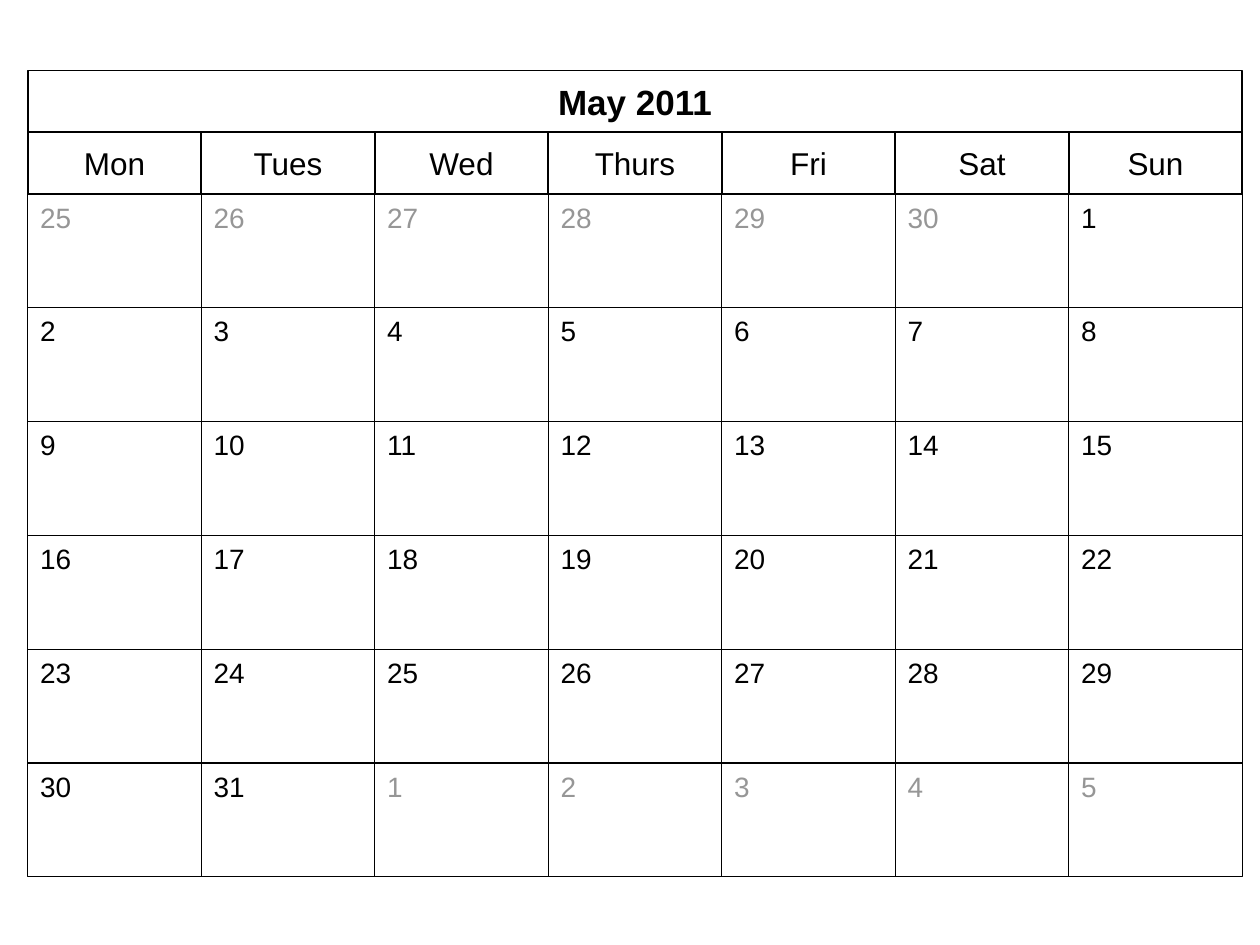
import dataclasses

import pptx
import pptx.dml.color
import pptx.enum.shapes
import pptx.enum.text
import pptx.util

Inches = pptx.util.Inches
Pt = pptx.util.Pt
ALIGN = pptx.enum.text.PP_ALIGN
ANCHOR = pptx.enum.text.MSO_ANCHOR


@dataclasses.dataclass(frozen=True)
class Theme:
    font: str = "Arial"
    ink: str = "000000"
    muted: str = "969696"
    paper: str = "FFFFFF"
    title_size: int = 20
    weekday_size: int = 18
    day_size: int = 16
    heading_line: float = 1
    day_line: float = 0.75


class Calendar:
    """Holds the theme, the current slide and the month grid (in inches)."""

    LEFT, TOP, WIDTH = 0.22, 0.56, 9.64
    COLUMNS, WEEKS = 7, 6
    HEADING_HEIGHT, WEEKS_HEIGHT = 0.49, 5.42

    def __init__(self, slide, theme):
        self.slide = slide
        self.theme = theme

    def row_top(self, row):
        """Rows 0 and 1 are headings; the weeks follow."""
        week_height = self.WEEKS_HEIGHT / self.WEEKS
        return (self.TOP + min(row, 2) * self.HEADING_HEIGHT
                + max(row - 2, 0) * week_height)

    def box(self, column, row, span=1):
        """Left, top, width and height of a grid cell."""
        col_width = self.WIDTH / self.COLUMNS
        top = self.row_top(row)
        return [Inches(v) for v in (self.LEFT + column * col_width, top,
                                    span * col_width, self.row_top(row + 1) - top)]

    def add_cell(self, column, row):
        sp = self.slide.shapes.add_shape(
            pptx.enum.shapes.MSO_SHAPE.RECTANGLE, *self.box(column, row))
        sp.shadow.inherit = False
        return sp

    def rgb(self, color):
        return pptx.dml.color.RGBColor.from_string(color)

    def outline(self, sp, width):
        sp.line.color.rgb = self.rgb(self.theme.ink)
        sp.line.width = Pt(width)

    def set_text(self, sp, text, size, color, align, anchor, bold=False):
        tf = sp.text_frame
        tf.word_wrap = True
        tf.auto_size = pptx.enum.text.MSO_AUTO_SIZE.NONE
        tf.vertical_anchor = anchor
        p = tf.paragraphs[0]
        p.text = text
        p.alignment = align
        p.font.name = self.theme.font
        p.font.size = Pt(size)
        p.font.bold = bold
        p.font.color.rgb = self.rgb(color)

    def heading(self, sp, text, size, bold=False):
        sp.fill.solid()
        sp.fill.fore_color.rgb = self.rgb(self.theme.paper)
        self.outline(sp, self.theme.heading_line)
        self.set_text(sp, text, size, self.theme.ink, ALIGN.CENTER, ANCHOR.MIDDLE, bold)
        sp.text_frame.margin_top = sp.text_frame.margin_bottom = Inches(0.02)

    def title(self, text):
        sp = self.slide.shapes.title
        sp.left, sp.top, sp.width, sp.height = self.box(0, 0, self.COLUMNS)
        self.heading(sp, text, self.theme.title_size, bold=True)

    def weekday(self, column, name):
        self.heading(self.add_cell(column, 1), name, self.theme.weekday_size)

    def day(self, index, number, in_month):
        week, column = divmod(index, self.COLUMNS)
        sp = self.add_cell(column, week + 2)
        sp.fill.background()
        self.outline(sp, self.theme.day_line)
        color = self.theme.ink if in_month else self.theme.muted
        self.set_text(sp, str(number), self.theme.day_size, color, ALIGN.LEFT, ANCHOR.TOP)


def main():
    prs = pptx.Presentation()
    prs.slide_width, prs.slide_height = Inches(10), Inches(7.5)
    s = prs.slides.add_slide(prs.slide_layouts.get_by_name("Title Only"))
    calendar = Calendar(s, Theme())

    # Month and weekday headings
    calendar.title("May 2011")
    for column, name in enumerate(["Mon", "Tues", "Wed", "Thurs", "Fri", "Sat", "Sun"]):
        calendar.weekday(column, name)

    # Days: end of April, all of May, start of June
    days = [(n, False) for n in range(25, 31)]
    days += [(n, True) for n in range(1, 32)]
    days += [(n, False) for n in range(1, 6)]
    for index, (number, in_month) in enumerate(days):
        calendar.day(index, number, in_month)

    prs.save("out.pptx")


if __name__ == "__main__":
    main()
